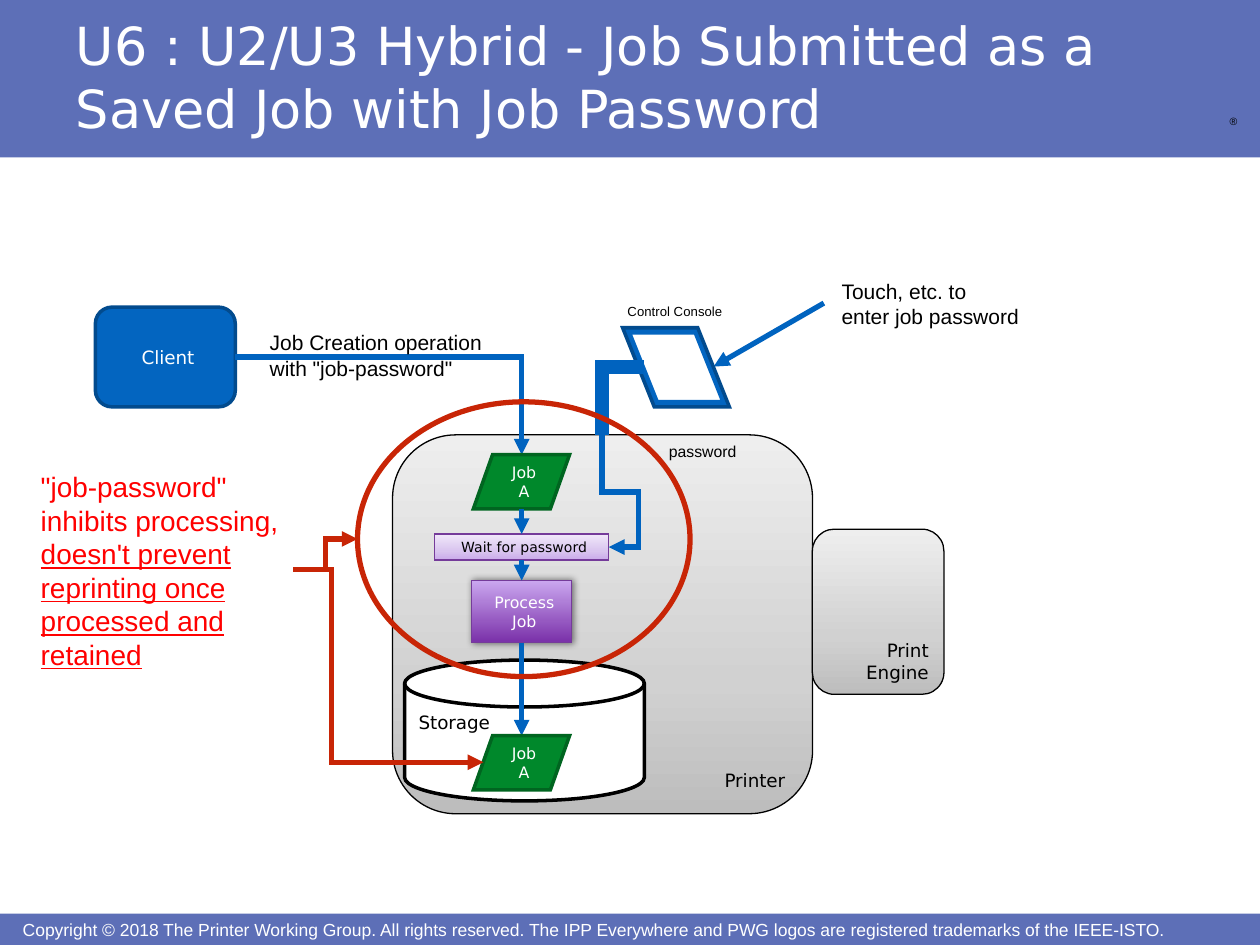
from dataclasses import dataclass
from typing import Optional

import pptx
import pptx.dml.color
import pptx.enum.shapes
import pptx.enum.text
import pptx.oxml
import pptx.oxml.ns
import pptx.util

Pt = pptx.util.Pt
qn = pptx.oxml.ns.qn
Shape = pptx.enum.shapes.MSO_SHAPE
Connector = pptx.enum.shapes.MSO_CONNECTOR
Align = pptx.enum.text.PP_ALIGN
Anchor = pptx.enum.text.MSO_ANCHOR
NS = pptx.oxml.ns.nsdecls("a")


@dataclass(frozen=True)
class Theme:
    sans: str = "Arial"
    display: str = "DejaVu Sans"
    black: str = "000000"
    white: str = "FFFFFF"
    band: str = "5D6FB7"
    blue: str = "0365C0"
    navy: str = "024B8E"
    flow: str = "0063BF"
    red: str = "C82506"
    note: str = "FF0000"
    green: str = "00882B"
    forest: str = "006520"
    violet: str = "753B9A"
    greys: tuple = ((0, "BDBDBD"), (35, "D1D1D1"), (100, "EEEEEE"))
    lilacs: tuple = ((0, "CAABEA"), (35, "D9C5EF"), (100, "F1E8FA"))
    purples: tuple = ((0, "7A31A9"), (100, "CAA6EF"))
    title_size: float = 30
    note_size: float = 16
    text_size: float = 12
    label_size: float = 10.5
    footer_size: float = 10
    job_size: float = 9
    wait_size: float = 8
    console_size: float = 7.5
    mark_size: float = 6


THEME = Theme()


@dataclass(frozen=True)
class Words:
    lines: tuple
    size: float
    color: str = THEME.black
    font: str = THEME.sans
    align: Align = Align.LEFT
    anchor: Anchor = Anchor.TOP
    margins: tuple = (7.2, 3.6)
    indent: float = 3
    wrap: bool = True
    underline_from: int = 99


@dataclass(frozen=True)
class Node:
    kind: Shape
    box: tuple
    fill: object = None  # colour, gradient stops or nothing
    line: Optional[str] = None
    weight: float = 0.75
    words: Optional[Words] = None
    adjust: Optional[float] = None
    flipped: bool = False
    shadow: bool = False


@dataclass(frozen=True)
class Elbow:
    start: tuple
    end: tuple
    preset: str
    rotation: int = 0
    flip: str = ""
    adjusts: tuple = ()
    color: str = THEME.flow
    weight: float = 3
    arrow: bool = True


def rgb(color: str):
    return pptx.dml.color.RGBColor.from_string(color)


def write(frame, words: Words) -> None:
    frame.word_wrap = words.wrap
    frame.vertical_anchor = words.anchor
    frame.margin_left = frame.margin_right = Pt(words.margins[0])
    frame.margin_top = frame.margin_bottom = Pt(words.margins[1])
    for index, line in enumerate(words.lines):
        paragraph = frame.add_paragraph() if index else frame.paragraphs[0]
        paragraph.alignment = words.align
        properties = paragraph._p.get_or_add_pPr()
        properties.set("marL", str(Pt(words.indent)))
        properties.set("indent", "0")
        run = paragraph.add_run()
        run.text = line
        run.font.name, run.font.size = words.font, Pt(words.size)
        run.font.color.rgb = rgb(words.color)
        if index >= words.underline_from:
            run.font.underline = True


def stroke(part, color: str, weight: float, arrow: bool = False) -> None:
    part.line.color.rgb = rgb(color)
    part.line.width = Pt(weight)
    outline = part.line._get_or_add_ln()
    outline.append(pptx.oxml.parse_xml(f'<a:miter {NS} lim="800000"/>'))
    if arrow:
        outline.append(pptx.oxml.parse_xml(f'<a:tailEnd {NS} type="triangle"/>'))


def paint_gradient(shape, stops: tuple) -> None:
    shape.fill.gradient()
    shape.fill.gradient_angle = 90
    stop_list = shape.element.spPr.find(".//" + qn("a:gsLst"))
    for stop in list(stop_list):
        stop_list.remove(stop)
    for position, color in stops:
        stop_list.append(pptx.oxml.parse_xml(
            f'<a:gs {NS} pos="{position * 1000}"><a:srgbClr val="{color}"/></a:gs>'))


def draw_node(slide, node: Node):
    shape = slide.shapes.add_shape(node.kind, *map(Pt, node.box))
    if node.adjust is not None:
        shape.adjustments[0] = node.adjust
    if node.flipped:
        shape.element.spPr.xfrm.set("flipV", "1")
    if node.fill is None:
        shape.fill.background()
    elif isinstance(node.fill, str):
        shape.fill.solid()
        shape.fill.fore_color.rgb = rgb(node.fill)
    else:
        paint_gradient(shape, node.fill)
    if node.line:
        stroke(shape, node.line, node.weight)
    else:
        shape.line.fill.background()
    shape.shadow.inherit = False
    if node.shadow:
        shape.element.spPr.find(qn("a:effectLst")).append(pptx.oxml.parse_xml(
            f'<a:outerShdw {NS} blurRad="{Pt(4)}" dist="{Pt(1)}" dir="0" rotWithShape="0">'
            '<a:srgbClr val="000000"><a:alpha val="50000"/></a:srgbClr></a:outerShdw>'))
    if node.words:
        write(shape.text_frame, node.words)
    return shape


def draw_text(slide, box: tuple, words: Words) -> None:
    frame = slide.shapes.add_textbox(*map(Pt, box)).text_frame
    write(frame, words)
    frame.auto_size = pptx.enum.text.MSO_AUTO_SIZE.SHAPE_TO_FIT_TEXT


def draw_arrow(slide, start: tuple, end: tuple, source=None, target=None) -> None:
    arrow = slide.shapes.add_connector(Connector.STRAIGHT, *map(Pt, start + end))
    if source is not None:
        arrow.begin_connect(source, 2)
    if target is not None:
        arrow.end_connect(target, 0)
    stroke(arrow, THEME.flow, 3, arrow=True)
    arrow.element.spPr.append(pptx.oxml.parse_xml(f"<a:effectLst {NS}/>"))


def draw_elbow(slide, elbow: Elbow) -> None:
    (x1, y1), (x2, y2) = elbow.start, elbow.end
    width, height = abs(x2 - x1), abs(y2 - y1)
    if elbow.rotation % 180:
        width, height = height, width
    left, top = (x1 + x2 - width) / 2, (y1 + y2 - height) / 2
    link = slide.shapes.add_connector(
        Connector.ELBOW, *map(Pt, (left, top, left + width, top + height)))
    properties = link.element.spPr
    if elbow.rotation:
        properties.xfrm.set("rot", str(elbow.rotation * 60000))
    if elbow.flip:
        properties.xfrm.set(elbow.flip, "1")
    geometry = properties.find(qn("a:prstGeom"))
    geometry.set("prst", elbow.preset)
    for number, value in enumerate(elbow.adjusts, 1):
        geometry.find(qn("a:avLst")).append(pptx.oxml.parse_xml(
            f'<a:gd {NS} name="adj{number}" fmla="val {round(value * 100000)}"/>'))
    stroke(link, elbow.color, elbow.weight, elbow.arrow)
    properties.append(pptx.oxml.parse_xml(f"<a:effectLst {NS}/>"))


def label(*lines: str, size=THEME.label_size, color=THEME.black,
          align=Align.CENTER, anchor=Anchor.MIDDLE) -> Words:
    return Words(lines, size, color, THEME.display, align, anchor, (5, 2.5))


def job_node(top: float) -> Node:
    return Node(Shape.FLOWCHART_DATA, (270.5, top, 55, 31), THEME.green, THEME.forest, 2,
                label("Job", "A", size=THEME.job_size, color=THEME.white))


def main() -> None:
    deck = pptx.Presentation()
    deck.slide_width, deck.slide_height = Pt(720), Pt(540)
    slide = deck.slides.add_slide(deck.slide_layouts[5])

    # Bands, footer and title
    for band in ((0, 522, 720, 18), (0, 0, 720, 90)):
        draw_node(slide, Node(Shape.RECTANGLE, band, THEME.band))
    draw_text(slide, (694, 62, 19.5, 13.7),
              Words(("®",), THEME.mark_size, margins=(4.3, 4.3), indent=4.3, wrap=False))
    draw_text(slide, (10, 525, 673, 12), Words(
        ("Copyright © 2018 The Printer Working Group. All rights reserved. The IPP Everywhere "
         "and PWG logos are registered trademarks of the IEEE-ISTO.",),
        THEME.footer_size, THEME.white, anchor=Anchor.MIDDLE, margins=(0, 0)))
    title = slide.shapes.title
    title.left, title.top, title.width, title.height = map(Pt, (36, 3.6, 596, 80))
    write(title.text_frame, Words(
        ("U6 : U2/U3 Hybrid - Job Submitted as a Saved Job with Job Password",),
        THEME.title_size, THEME.white, THEME.display, anchor=Anchor.BOTTOM, margins=(4.3, 4.3)))
    title.text_frame.auto_size = pptx.enum.text.MSO_AUTO_SIZE.NONE
    title.element.getparent().append(title.element)  # in front of the band

    # Printer, storage and processing step
    axis = 298.1
    corner = dict(align=Align.RIGHT, anchor=Anchor.BOTTOM)
    draw_node(slide, Node(Shape.ROUNDED_RECTANGLE, (224.3, 248.5, 240, 216.5), THEME.greys,
                          THEME.black, words=label("Printer", **corner)))
    draw_node(slide, Node(Shape.FLOWCHART_MAGNETIC_DISK, (231.2, 377.2, 137, 80.5),
                          THEME.white, THEME.black, 2,
                          label("Storage", align=Align.LEFT, anchor=Anchor.TOP)))
    process = draw_node(slide, Node(
        Shape.FLOWCHART_PROCESS, (axis - 28.5, 331.7, 57, 35.5), THEME.purples, THEME.violet,
        words=label("Process Job", size=THEME.job_size, color=THEME.white), shadow=True))

    # Control console and password entry
    draw_arrow(slide, (470.8, 173.2), (407.8, 209.5))
    draw_text(slide, (470.8, 155.5, 123, 36),
              Words(("Touch, etc. to", "enter job password"), THEME.text_size, wrap=False))
    for box, fill, line in (((355.8, 187.3, 61, 45.2), THEME.blue, THEME.navy),
                            ((359.8, 190.2, 53.2, 39.3), THEME.white, THEME.blue)):
        draw_node(slide, Node(Shape.PARALLELOGRAM, box, fill, line, 2,
                              adjust=0.4, flipped=True))
    entry = (344.1, 248.5)
    draw_elbow(slide, Elbow((368, 209.5), entry, "bentConnector2", 180, "flipV",
                            weight=8, arrow=False))
    draw_text(slide, (348.5, 170, 75, 16.6),
              Words(("Control Console",), THEME.console_size, wrap=False))
    wait = draw_node(slide, Node(
        Shape.FLOWCHART_PROCESS, (axis - 49.8, 305.2, 99.6, 14.8), THEME.lilacs, THEME.violet,
        words=label("Wait for password", size=THEME.wait_size)))
    draw_elbow(slide, Elbow(entry, (347.9, 312.6), "bentConnector4", 270, "flipH",
                            (0.51, 5.43)))
    draw_text(slide, (372.2, 249.1, 60, 18),
              Words(("password",), THEME.job_size, wrap=False))

    # Client and the job's way to storage
    draw_node(slide, Node(Shape.ROUNDED_RECTANGLE, (54.5, 175.5, 80, 57), THEME.blue,
                          THEME.navy, 2, label("Client", color=THEME.white)))
    draw_elbow(slide, Elbow((134.5, 204), (axis, 259.8), "bentConnector2"))
    draw_text(slide, (144, 185, 142.6, 36),
              Words(("Job Creation operation", 'with "job-password"'), THEME.text_size))
    draw_node(slide, job_node(259.8))
    draw_arrow(slide, (axis, 290.8), (axis, 305.2), target=wait)
    draw_arrow(slide, (axis, 320), (axis, 331.7), wait, process)
    draw_node(slide, Node(Shape.ROUNDED_RECTANGLE, (464.2, 302.4, 75.2, 94.4), THEME.greys,
                          THEME.black, words=label("Print", "Engine", **corner)))
    draw_arrow(slide, (axis, 367.2), (axis, 420.4), source=process)
    draw_node(slide, job_node(420.4))

    # Remark in red
    draw_node(slide, Node(Shape.OVAL, (204.3, 229.6, 190, 157), line=THEME.red, weight=3))
    remark = (167.6, 325.4)
    draw_elbow(slide, Elbow(remark, (204.3, 308), "bentConnector3", flip="flipV",
                            adjusts=(0.5,), color=THEME.red))
    draw_text(slide, (16, 263.6, 152, 124.6), Words(
        ('"job-password"', "inhibits processing,", "doesn't prevent", "reprinting once",
         "processed and", "retained"), THEME.note_size, THEME.note, anchor=Anchor.MIDDLE,
        margins=(4.3, 4.3), wrap=False, underline_from=2))
    draw_elbow(slide, Elbow(remark, (276.2, 435.6), "bentConnector3",
                            adjusts=(0.2,), color=THEME.red))
    deck.save("out.pptx")


if __name__ == "__main__":
    main()
